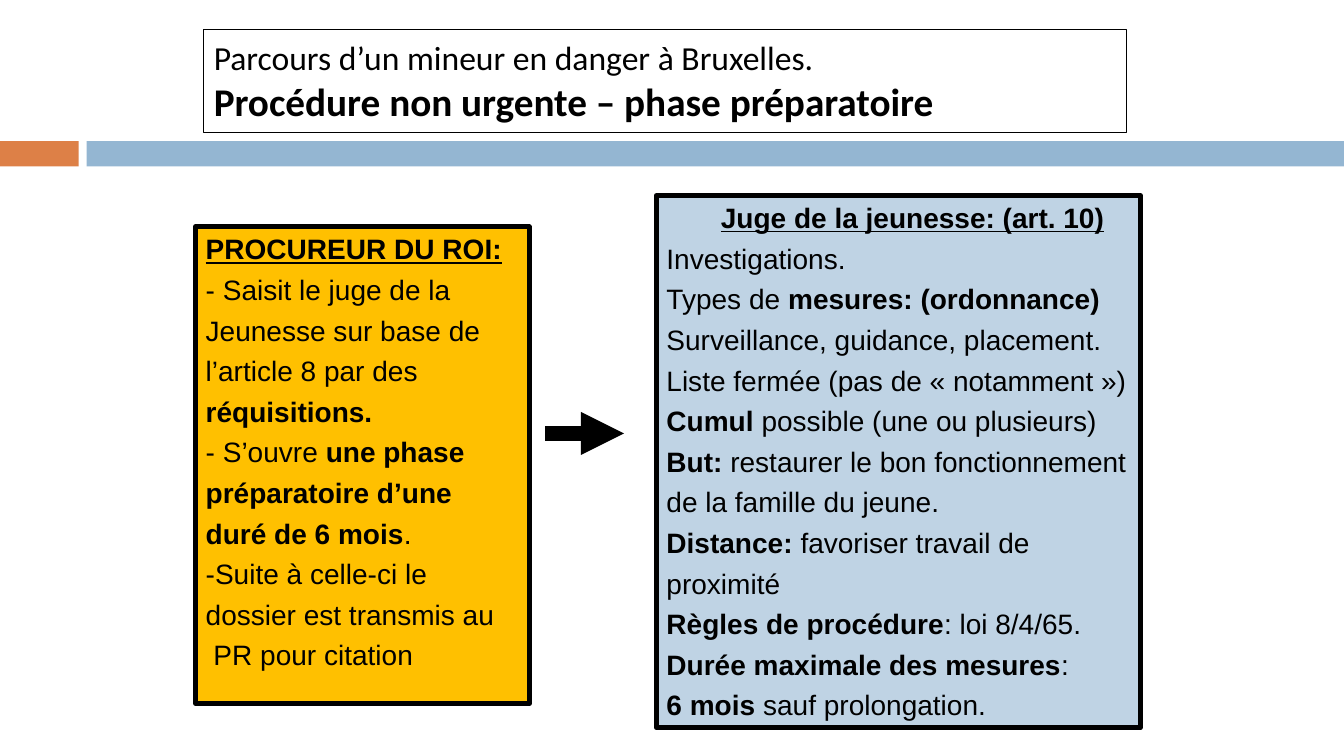
from pptx import Presentation
from pptx.dml.color import RGBColor
from pptx.enum.shapes import MSO_CONNECTOR, MSO_SHAPE
from pptx.enum.text import MSO_ANCHOR, MSO_AUTO_SIZE, PP_ALIGN
from pptx.oxml.ns import qn
from pptx.util import Inches, Pt
from lxml import etree

BLACK = RGBColor(0x00, 0x00, 0x00)
WHITE = RGBColor(0xFF, 0xFF, 0xFF)
ORANGE = RGBColor(0xDD, 0x80, 0x47)
BLUE = RGBColor(0x94, 0xB6, 0xD2)
PALE_BLUE = RGBColor(0xBF, 0xD3, 0xE4)
AMBER = RGBColor(0xFF, 0xC0, 0x00)

RECTANGLE = MSO_SHAPE.RECTANGLE
STRAIGHT = MSO_CONNECTOR.STRAIGHT
LEFT = PP_ALIGN.LEFT
MIDDLE = MSO_ANCHOR.MIDDLE
TOP = MSO_ANCHOR.TOP
NO_AUTOFIT = MSO_AUTO_SIZE.NONE

PLAIN, BOLD, HEADING = "plain", "bold", "heading"

PROSECUTOR_LINES = [
    [("PROCUREUR DU ROI:", HEADING)],
    [("- Saisit le juge de la", PLAIN)],
    [("Jeunesse sur base de", PLAIN)],
    [("l’article 8 par des", PLAIN)],
    [("réquisitions.", BOLD)],
    [("- S’ouvre", PLAIN), (" une phase", BOLD)],
    [("préparatoire d’une", BOLD)],
    [("duré de 6 mois", BOLD), (".", PLAIN)],
    [("-Suite à celle-ci le", PLAIN)],
    [("dossier est transmis au", PLAIN)],
    [(" PR pour citation", PLAIN)],
]

JUDGE_LINES = [
    [("Juge de la jeunesse: (art. 10)", HEADING)],
    [("Investigations.", PLAIN)],
    [("Types de ", PLAIN), ("mesures: (ordonnance)", BOLD)],
    [("Surveillance, guidance, placement.", PLAIN)],
    [("Liste fermée (pas de « notamment »)", PLAIN)],
    [("Cumul ", BOLD), ("possible (une ou plusieurs)", PLAIN)],
    [("But:", BOLD), (" restaurer le bon fonctionnement", PLAIN)],
    [("de la famille du jeune.", PLAIN)],
    [("Distance:", BOLD), (" favoriser travail de", PLAIN)],
    [("proximité", PLAIN)],
    [("Règles de procédure", BOLD), (": loi 8/4/65.", PLAIN)],
    [("Durée maximale des mesures", BOLD), (":", PLAIN)],
    [("6 mois", BOLD), (" sauf prolongation.", PLAIN)],
]


class SlideBuilder:
    title_font = "Calibri"
    body_font = "Arial"
    body_size = 20
    hanging = 0.38

    def __init__(self, slide):
        self.slide = slide

    def place(self, shape, left, top, width, height):
        shape.left, shape.top = Inches(left), Inches(top)
        shape.width, shape.height = Inches(width), Inches(height)

    def paint(self, shape, fill, line_width):
        shape.fill.solid()
        shape.fill.fore_color.rgb = fill
        shape.line.color.rgb = BLACK
        shape.line.width = Pt(line_width)

    def frame(self, shape, anchor):
        text_frame = shape.text_frame
        text_frame.word_wrap = True
        text_frame.auto_size = NO_AUTOFIT
        text_frame.vertical_anchor = anchor
        return text_frame

    def run(self, paragraph, text, font, size, style):
        run = paragraph.add_run()
        run.text = text
        run.font.name = font
        run.font.size = Pt(size)
        run.font.color.rgb = BLACK
        run.font.bold = style != PLAIN
        run.font.underline = style == HEADING

    def bar(self, left, width, color):
        shape = self.slide.shapes.add_shape(
            RECTANGLE, Inches(left), Inches(1.4), Inches(width), Inches(0.25))
        shape.shadow.inherit = False
        shape.fill.solid()
        shape.fill.fore_color.rgb = color
        shape.line.fill.background()

    def title(self, bounds, first_line, second_line):
        shape = self.slide.shapes.title
        self.place(shape, *bounds)
        self.paint(shape, WHITE, 0.75)
        paragraph = self.frame(shape, MIDDLE).paragraphs[0]
        paragraph.alignment = LEFT
        self.run(paragraph, first_line, self.title_font, 24, PLAIN)
        paragraph.add_line_break()
        self.run(paragraph, second_line, self.title_font, 28, BOLD)

    def panel(self, index, bounds, fill, lines, heading_indent=0):
        shape = self.slide.placeholders[index]
        self.place(shape, *bounds)
        self.paint(shape, fill, 3.5)
        text_frame = self.frame(shape, TOP)
        for number, runs in enumerate(lines):
            paragraph = text_frame.add_paragraph() if number else text_frame.paragraphs[0]
            paragraph.alignment = LEFT
            paragraph.space_before = Pt(5)
            first_indent = 0 if number else heading_indent
            properties = paragraph._p.get_or_add_pPr()
            properties.set("marL", str(Inches(self.hanging)))
            properties.set("indent", str(Inches(first_indent - self.hanging)))
            etree.SubElement(properties, qn("a:buNone"))
            for text, style in runs:
                self.run(paragraph, text, self.body_font, self.body_size, style)

    def arrow(self, start, end, height):
        connector = self.slide.shapes.add_connector(
            STRAIGHT, Inches(start), Inches(height), Inches(end), Inches(height))
        connector.line.color.rgb = BLACK
        connector.line.width = Pt(10.25)
        etree.SubElement(connector.line._get_or_add_ln(), qn("a:tailEnd"), type="triangle")
        etree.SubElement(connector._element.spPr, qn("a:effectLst"))


def main():
    presentation = Presentation()
    presentation.slide_width = Inches(13.33)
    presentation.slide_height = Inches(7.5)
    two_content = presentation.slide_layouts[3]
    builder = SlideBuilder(presentation.slides.add_slide(two_content))

    builder.bar(0, 0.78, ORANGE)
    builder.bar(0.86, 12.47, BLUE)
    builder.title((2.02, 0.29, 9.15, 1.02),
                  "Parcours d’un mineur en danger à Bruxelles.",
                  "Procédure non urgente – phase préparatoire")
    builder.panel(1, (1.94, 2.25, 3.31, 4.73), AMBER, PROSECUTOR_LINES)
    builder.arrow(5.41, 6.19, 4.3)
    builder.panel(2, (6.51, 1.94, 4.8, 5.28), PALE_BLUE, JUDGE_LINES, heading_indent=0.54)

    presentation.save("out.pptx")


if __name__ == "__main__":
    main()
